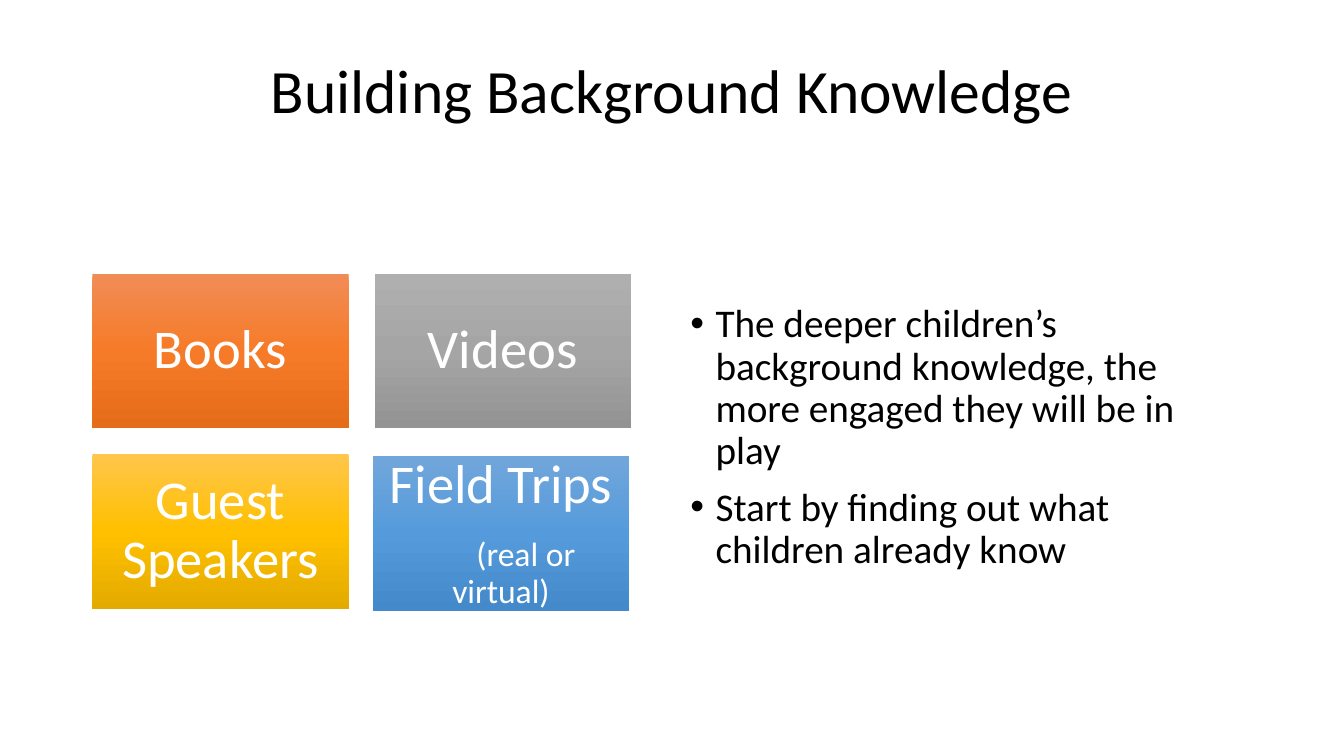
import dataclasses

import lxml.etree
import copy
import pptx
import pptx.dml.color
import pptx.enum.shapes
import pptx.enum.text
import pptx.oxml.ns
import pptx.shapes.autoshape
import pptx.slide
import pptx.text.text
import pptx.util

SLIDE_WIDTH = pptx.util.Inches(13.333)
SLIDE_HEIGHT = pptx.util.Inches(7.5)
COLUMNS = 16
ROWS = 9


@dataclasses.dataclass(frozen=True)
class Theme:
    font: str = "Calibri"
    ink: str = "000000"
    tile_ink: str = "FFFFFF"
    orange: tuple[str, ...] = ("F18C57", "F67B28", "E56C19")
    grey: tuple[str, ...] = ("AFAFAF", "A5A5A5", "939393")
    gold: tuple[str, ...] = ("FFC64B", "FFC000", "E3AB00")
    blue: tuple[str, ...] = ("71A6DB", "559BDB", "448ACA")
    title_size: int = 44
    tile_size: int = 39
    note_size: int = 24
    body_size: int = 28
    line_spacing: float = 0.9


@dataclasses.dataclass(frozen=True)
class Area:
    column: float
    row: float
    columns: float
    rows: float

    def lengths(self) -> tuple[int, int, int, int]:
        return (across(self.column), down(self.row), across(self.columns), down(self.rows))


@dataclasses.dataclass(frozen=True)
class Tile:
    label: str
    gradient: tuple[str, ...]
    note: str = ""
    nudge: float = 0


THEME = Theme()
TITLE_AREA = Area(1.1, 0.48, 13.8, 1.26)
POINTS_AREA = Area(8.1, 3.56, 6.8, 4.55)
FIRST_TILE = Area(1.1, 3.26, 3.05, 1.84)
TILE_GAP = 0.31
TILE_INSET = 0.19
NOTE_INDENT = 0.59
BULLET_INDENT = 0.3
TILES_PER_ROW = 2
TILES = (
    Tile("Books", THEME.orange),
    Tile("Videos", THEME.grey),
    Tile("Guest Speakers", THEME.gold),
    Tile("Field Trips", THEME.blue, "(real or virtual)", 0.02),
)
POINTS = (
    "The deeper children’s background knowledge, the more engaged they will be in play",
    "Start by finding out what children already know",
)


def across(columns: float) -> int:
    return round(SLIDE_WIDTH * columns / COLUMNS)


def down(rows: float) -> int:
    return round(SLIDE_HEIGHT * rows / ROWS)


def style_paragraph(paragraph: pptx.text.text._Paragraph, size: int, color: str) -> None:
    paragraph.line_spacing = THEME.line_spacing
    for run in paragraph.runs:
        run.font.name = THEME.font
        run.font.size = pptx.util.Pt(size)
        run.font.color.rgb = pptx.dml.color.RGBColor.from_string(color)


def add_title(slide: pptx.slide.Slide, text: str) -> None:
    frame = slide.shapes.add_textbox(*TITLE_AREA.lengths()).text_frame
    frame.word_wrap = True
    frame.vertical_anchor = pptx.enum.text.MSO_ANCHOR.MIDDLE
    frame.text = text
    frame.paragraphs[0].alignment = pptx.enum.text.PP_ALIGN.CENTER
    style_paragraph(frame.paragraphs[0], THEME.title_size, THEME.ink)


def fill_gradient(shape: pptx.shapes.autoshape.Shape, colors: tuple[str, ...]) -> None:
    shape.fill.gradient()
    shape.fill.gradient_angle = 270
    stop_list = shape._element.spPr.find(".//" + pptx.oxml.ns.qn("a:gsLst"))
    stop_list.append(copy.deepcopy(stop_list[-1]))
    for index, (stop, color) in enumerate(zip(shape.fill.gradient_stops, colors)):
        stop.position = index / (len(colors) - 1)
        stop.color.rgb = pptx.dml.color.RGBColor.from_string(color)


def add_tile(slide: pptx.slide.Slide, tile: Tile, index: int) -> None:
    row, column = divmod(index, TILES_PER_ROW)
    area = dataclasses.replace(
        FIRST_TILE,
        column=FIRST_TILE.column + column * (FIRST_TILE.columns + TILE_GAP) - tile.nudge,
        row=FIRST_TILE.row + row * (FIRST_TILE.rows + TILE_GAP) + tile.nudge,
    )
    shape = slide.shapes.add_shape(pptx.enum.shapes.MSO_SHAPE.RECTANGLE, *area.lengths())
    shape.shadow.inherit = False
    shape.line.fill.background()
    fill_gradient(shape, tile.gradient)
    frame = shape.text_frame
    frame.word_wrap = True
    frame.vertical_anchor = pptx.enum.text.MSO_ANCHOR.MIDDLE
    frame.margin_left = frame.margin_right = across(TILE_INSET)
    frame.margin_top = frame.margin_bottom = down(TILE_INSET)
    frame.text = tile.label
    style_paragraph(frame.paragraphs[0], THEME.tile_size, THEME.tile_ink)
    if tile.note:
        note = frame.add_paragraph()
        note.text = tile.note
        note._p.get_or_add_pPr().set("indent", str(across(NOTE_INDENT)))
        note.space_before = pptx.util.Pt(16)
        style_paragraph(note, THEME.note_size, THEME.tile_ink)
    for paragraph in frame.paragraphs:
        paragraph.alignment = pptx.enum.text.PP_ALIGN.CENTER


def add_bullet(paragraph: pptx.text.text._Paragraph) -> None:
    properties = paragraph._p.get_or_add_pPr()
    properties.set("marL", str(across(BULLET_INDENT)))
    properties.set("indent", str(-across(BULLET_INDENT)))
    font = lxml.etree.SubElement(properties, pptx.oxml.ns.qn("a:buFont"))
    font.set("typeface", "Arial")
    bullet = lxml.etree.SubElement(properties, pptx.oxml.ns.qn("a:buChar"))
    bullet.set("char", "•")


def add_points(slide: pptx.slide.Slide, points: tuple[str, ...]) -> None:
    frame = slide.shapes.add_textbox(*POINTS_AREA.lengths()).text_frame
    frame.word_wrap = True
    frame.text = "\n".join(points)
    for index, paragraph in enumerate(frame.paragraphs):
        add_bullet(paragraph)
        if index:
            paragraph.space_before = pptx.util.Pt(10)
        style_paragraph(paragraph, THEME.body_size, THEME.ink)


def main() -> None:
    presentation = pptx.Presentation()
    presentation.slide_width = SLIDE_WIDTH
    presentation.slide_height = SLIDE_HEIGHT
    slide = presentation.slides.add_slide(presentation.slide_layouts[6])
    add_title(slide, "Building Background Knowledge")
    for index, tile in enumerate(TILES):
        add_tile(slide, tile, index)
    add_points(slide, POINTS)
    presentation.save("out.pptx")


if __name__ == "__main__":
    main()
